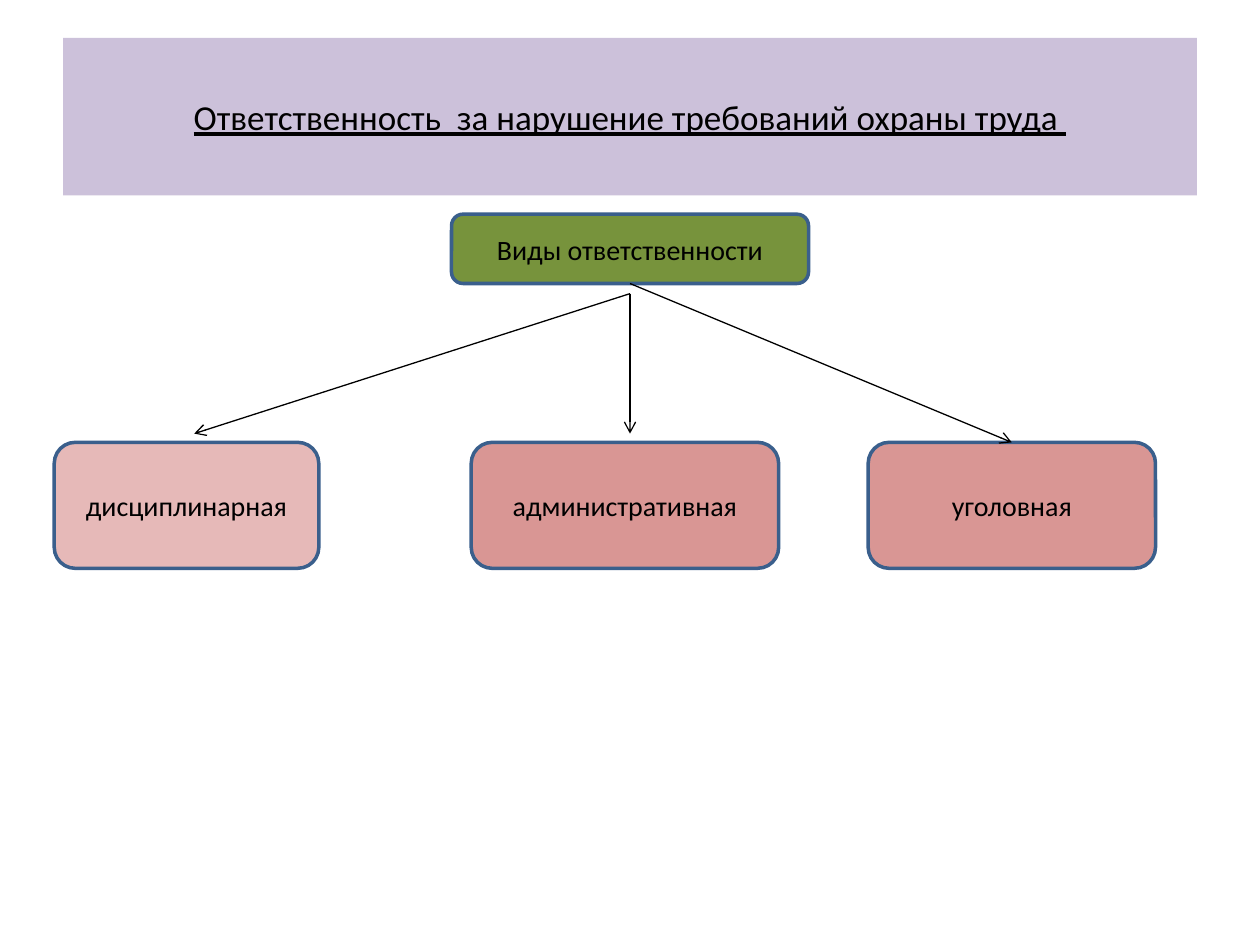
from dataclasses import dataclass

from pptx import Presentation
from pptx.dml.color import RGBColor
from pptx.enum.shapes import MSO_CONNECTOR, MSO_SHAPE
from pptx.enum.text import MSO_ANCHOR, PP_ALIGN
from pptx.oxml.ns import qn
from pptx.util import Pt
from lxml import etree

ROUNDED = MSO_SHAPE.ROUNDED_RECTANGLE
STRAIGHT = MSO_CONNECTOR.STRAIGHT
MIDDLE = MSO_ANCHOR.MIDDLE
CENTER = PP_ALIGN.CENTER
TITLE_ONLY = 5
TOP, BOTTOM = 0, 2


@dataclass(frozen=True)
class Theme:
    font: str = "Calibri"
    title_size: float = 20
    body_size: float = 16
    border_width: float = 2
    arrow_width: float = 0.75
    ink: RGBColor = RGBColor.from_string("000000")
    banner: RGBColor = RGBColor.from_string("CCC1DA")
    root: RGBColor = RGBColor.from_string("77933C")
    light_kind: RGBColor = RGBColor.from_string("E6B9B8")
    kind: RGBColor = RGBColor.from_string("D99694")
    border: RGBColor = RGBColor.from_string("3A5F8C")


THEME = Theme()


def write_centred(shape, wording, size, underline=False):
    frame = shape.text_frame
    frame.text = wording
    frame.word_wrap = True
    frame.vertical_anchor = MIDDLE
    paragraph = frame.paragraphs[0]
    paragraph.alignment = CENTER
    font = paragraph.runs[0].font
    font.name = THEME.font
    font.size = Pt(size)
    font.underline = underline
    font.color.rgb = THEME.ink


def fill_solid(shape, color):
    shape.fill.solid()
    shape.fill.fore_color.rgb = color


def place_title(slide, box, wording):
    title = slide.shapes.title
    title.left, title.top, title.width, title.height = map(Pt, box)
    fill_solid(title, THEME.banner)
    write_centred(title, wording, THEME.title_size, underline=True)


def add_node(slide, box, wording, color):
    node = slide.shapes.add_shape(ROUNDED, *map(Pt, box))
    node.shadow.inherit = False
    fill_solid(node, color)
    node.line.color.rgb = THEME.border
    node.line.width = Pt(THEME.border_width)
    write_centred(node, wording, THEME.body_size)
    return node


def add_arrow(slide, start, end):
    arrow = slide.shapes.add_connector(STRAIGHT, *map(Pt, start + end))
    arrow.line.color.rgb = THEME.ink
    arrow.line.width = Pt(THEME.arrow_width)
    outline = arrow.line._get_or_add_ln()
    etree.SubElement(outline, qn("a:tailEnd"), type="arrow")
    etree.SubElement(arrow._element.spPr, qn("a:effectLst"))
    return arrow


def add_liability_tree(slide, box):
    left, top, width, height = box
    root_width, root_height, kind_height = 204, 39.6, 72
    root_middle = left + 329
    kinds_top = top + height - kind_height
    root_box = (root_middle - root_width / 2, top, root_width, root_height)
    root = add_node(slide, root_box, "Виды ответственности", THEME.root)

    kinds = [
        ("дисциплинарная", 0, 151.2, THEME.light_kind),
        ("административная", 238.3, 175.7, THEME.kind),
        ("уголовная", width - 164.2, 164.2, THEME.kind),
    ]
    nodes = [
        add_node(slide, (left + offset, kinds_top, kind_width, kind_height), wording, color)
        for wording, offset, kind_width, color in kinds
    ]

    fork = (root_middle, top + root_height + 5.8)
    for tip_offset in (80, 329):
        add_arrow(slide, fork, (left + tip_offset, kinds_top - 5))

    criminal_middle = left + width - 82.1
    joined = add_arrow(slide, (root_middle, top + root_height), (criminal_middle, kinds_top))
    joined.begin_connect(root, BOTTOM)
    joined.end_connect(nodes[-1], TOP)


def main():
    deck = Presentation()
    deck.slide_width, deck.slide_height = Pt(720), Pt(540)
    slide = deck.slides.add_slide(deck.slide_layouts[TITLE_ONLY])
    place_title(slide, (36, 21.6, 648, 90), "Ответственность  за нарушение требований охраны труда ")
    add_liability_tree(slide, (31, 122.4, 629.3, 202.4))
    deck.save("out.pptx")


if __name__ == "__main__":
    main()
